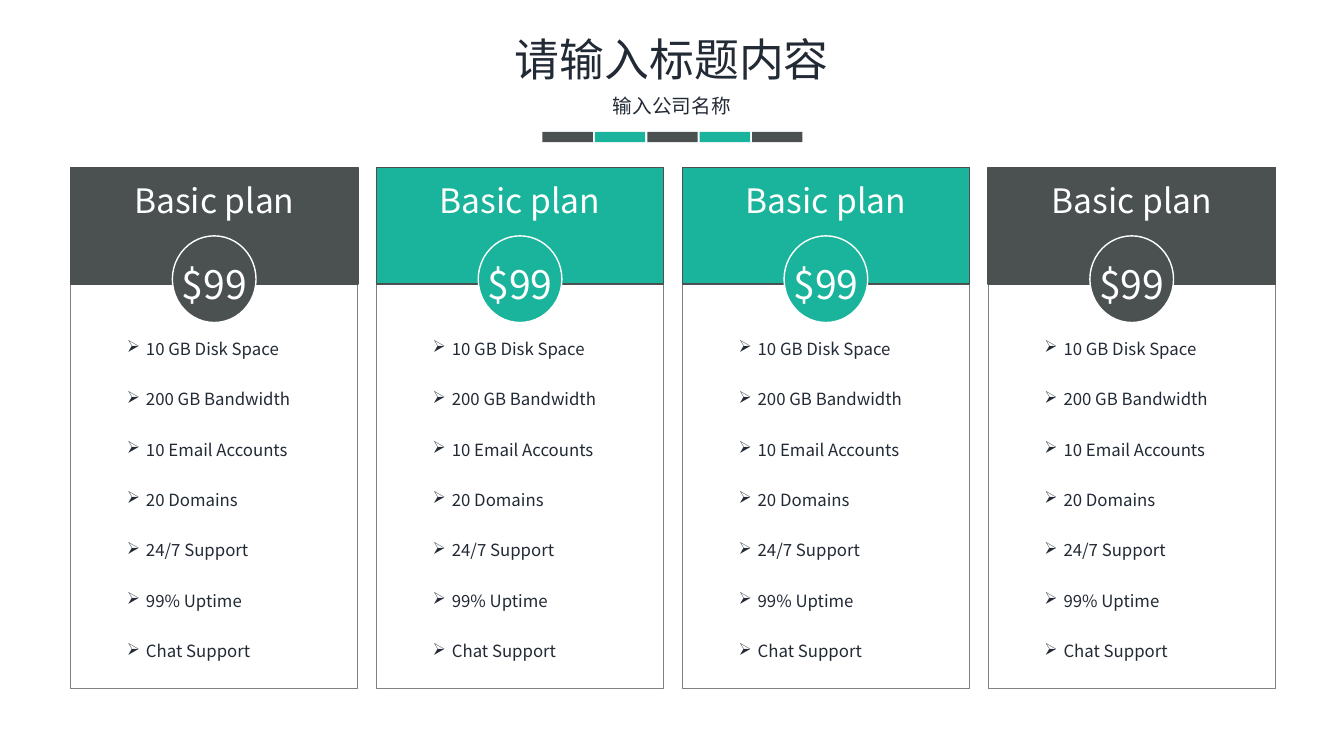
from lxml.etree import SubElement
from pptx import Presentation
from pptx.dml.color import RGBColor
from pptx.enum.shapes import MSO_SHAPE as Form
from pptx.enum.text import MSO_AUTO_SIZE as Fit, PP_ALIGN as Align
from pptx.oxml.ns import qn
from pptx.util import Inches, Pt

GREY, TEAL, INK, WHITE, EDGE = "4B5050", "19B49B", "222A35", "FFFFFF", "808080"
ITEMS = ["10 GB Disk Space", "200 GB Bandwidth", "10 Email Accounts",
         "20 Domains", "24/7 Support", "99% Uptime", "Chat Support"]
PLANS = [("Basic plan", "$99", tint) for tint in (GREY, TEAL, TEAL, GREY)]
LEFT, WIDTH, RIGHT = 0.7, 2.85, 12.65


def color(code):
    return RGBColor.from_string(code)


class Page:
    font = "Noto Sans CJK SC"

    def __init__(self, slide):
        self.shapes = slide.shapes

    def shape(self, form, x, y, w, h, fill=None, line=None, weight=1):
        item = self.shapes.add_shape(form, *map(Inches, (x, y, w, h)))
        item.shadow.inherit = False
        if fill:
            item.fill.solid()
            item.fill.fore_color.rgb = color(fill)
        else:
            item.fill.background()
        if line:
            item.line.color.rgb = color(line)
            item.line.width = Pt(weight)
        else:
            item.line.fill.background()

    def frame(self, x, y, w, h):
        frame = self.shapes.add_textbox(*map(Inches, (x, y, w, h))).text_frame
        frame.word_wrap = True
        frame.auto_size = Fit.SHAPE_TO_FIT_TEXT
        return frame

    def run(self, para, words, size, tint):
        run = para.add_run()
        run.text = words
        run.font.size = Pt(size)
        run.font.name = self.font
        run.font.color.rgb = color(tint)
        SubElement(run.font._element, qn("a:ea"), typeface=self.font)

    def label(self, words, x, y, w, h, size, tint=WHITE):
        para = self.frame(x, y, w, h).paragraphs[0]
        para.alignment = Align.CENTER
        self.run(para, words, size, tint)

    def bullets(self, items, x, y, w, h, size):
        frame = self.frame(x, y, w, h)
        for i, words in enumerate(items):
            para = frame.add_paragraph() if i else frame.paragraphs[0]
            para.line_spacing = 2.5
            props = para._p.get_or_add_pPr()
            props.set("marL", str(Inches(0.19)))
            props.set("indent", str(-Inches(0.19)))
            SubElement(props, qn("a:buChar"), char="➢")
            self.run(para, words, size, INK)

    def plan(self, x, name, price, tint):
        """Draw one price card with its left edge at x."""
        mid = x + WIDTH / 2
        self.shape(Form.RECTANGLE, x, 2.45, WIDTH, 4.38, line=EDGE, weight=0)
        self.bullets(ITEMS, x + 0.46, 3.01, 1.93, 3.64, 12)
        self.shape(Form.RECTANGLE, x, 1.66, WIDTH, 1.16, tint, GREY)
        self.label(name, x, 1.74, WIDTH, 0.5, 24)
        self.shape(Form.OVAL, mid - 0.415, 2.34, 0.83, 0.86, tint, WHITE)
        self.label(price, mid - 0.81, 2.53, 1.62, 0.57, 28)


def main():
    deck = Presentation()
    deck.slide_width, deck.slide_height = Inches(13.33), Inches(7.5)
    page = Page(deck.slides.add_slide(deck.slide_layouts[6]))
    page.label("请输入标题内容", 0, 0.27, 13.33, 0.64, 32, INK)
    page.label("输入公司名称", 0.68, 0.88, 11.97, 0.34, 14, INK)
    for i in range(5):
        page.shape(Form.RECTANGLE, 5.38 + 0.52 * i, 1.31, 0.5, 0.1,
                   TEAL if i % 2 else GREY)
    step = (RIGHT - WIDTH - LEFT) / (len(PLANS) - 1)
    for i, plan in enumerate(PLANS):
        page.plan(LEFT + step * i, *plan)
    deck.save("out.pptx")


if __name__ == "__main__":
    main()
